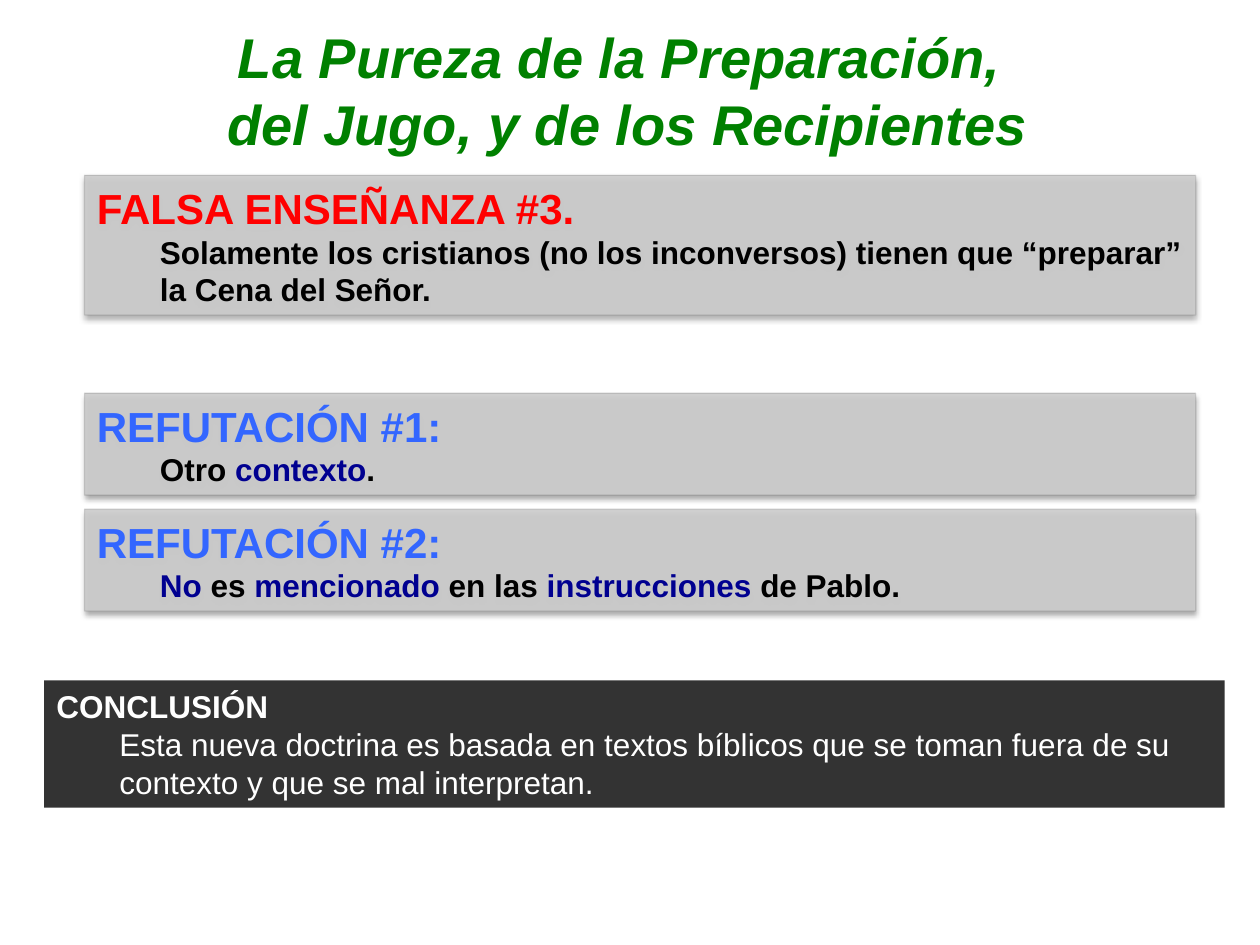
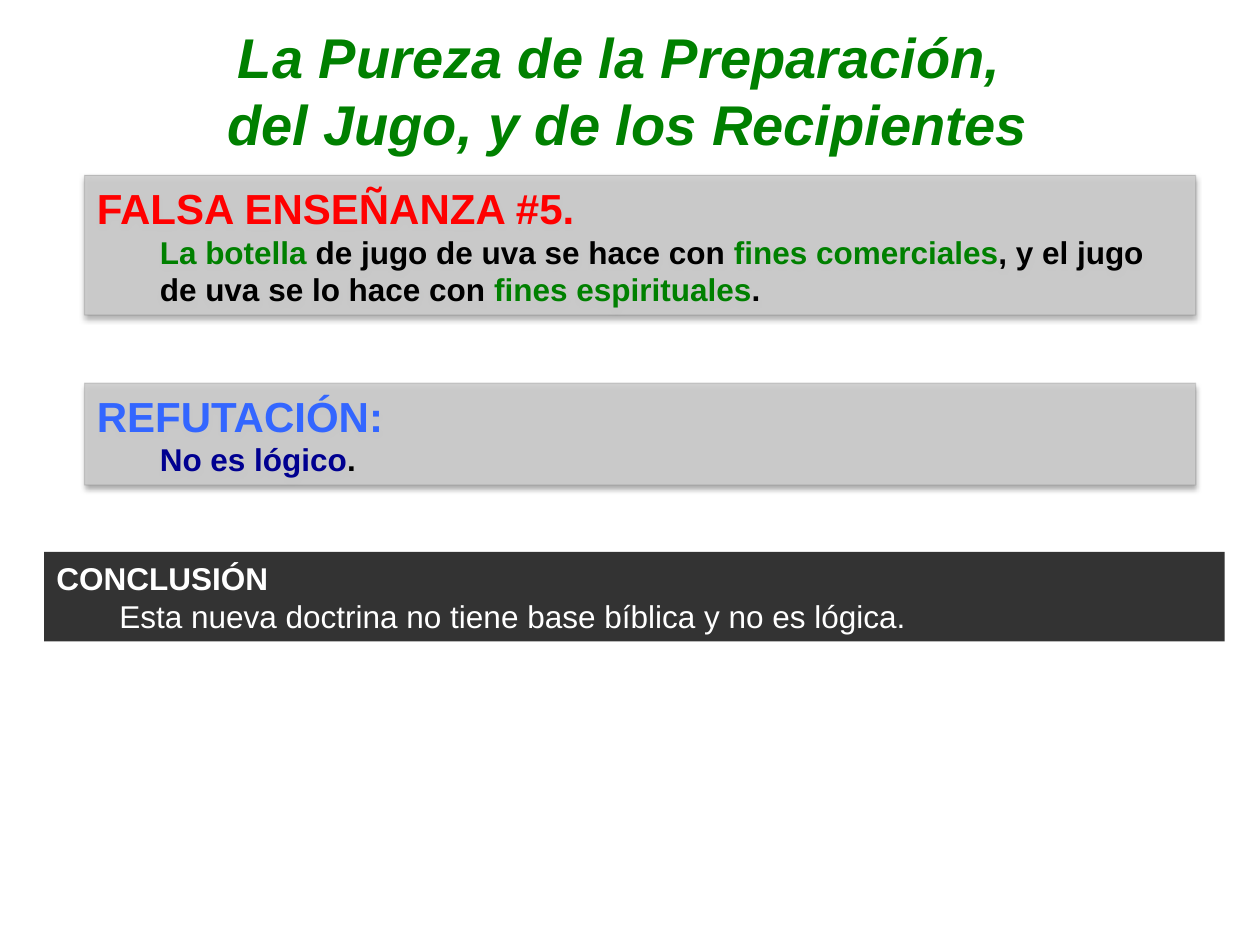
from dataclasses import dataclass
from typing import NamedTuple

from lxml import etree
from pptx import Presentation
from pptx import util as u
from pptx.dml import color as col
from pptx.enum import shapes, text
from pptx.oxml import ns


@dataclass(frozen=True)
class Theme:
    face: str = "Arial"
    green: str = "008000"
    red: str = "FF0000"
    blue: str = "3366FF"
    navy: str = "000090"
    black: str = "000000"
    white: str = "FFFFFF"
    gray: str = "CCCCCC"
    dark: str = "333333"
    title: int = 32
    head: int = 24
    body: int = 18


T = Theme()
TITLE = "La Pureza de la Preparación, \vdel Jugo, y de los Recipientes"


class Span(NamedTuple):
    words: str
    tint: str = T.black


class Card(NamedTuple):
    top: float
    high: float
    head: str
    tint: str
    spans: list[Span]


class Close(NamedTuple):
    top: float
    high: float
    words: str


class Page(NamedTuple):
    cards: list[Card]
    close: Close


def claim(num: int, spans: list[Span]) -> Card:
    return Card(1.39, 1.11, f"FALSA ENSEÑANZA #{num}.", T.red, spans)


def reply(top: float, head: str, spans: list[Span]) -> Card:
    return Card(top, 0.81, head, T.blue, spans)


PAGES = [
    Page(
        [
            claim(3, [Span("Solamente los cristianos (no los inconversos) tienen que "
                           "“preparar” la Cena del Señor.")]),
            reply(3.12, "REFUTACIÓN #1:",
                  [Span("Otro "), Span("contexto", T.navy), Span(".")]),
            reply(4.04, "REFUTACIÓN #2:",
                  [Span("No ", T.navy), Span("es "), Span("mencionado", T.navy),
                   Span(" en las "), Span("instrucciones", T.navy),
                   Span(" de Pablo.")]),
        ],
        Close(5.4, 1.01, "Esta nueva doctrina es basada en textos bíblicos que se toman "
                         "fuera de su contexto y que se mal interpretan."),
    ),
    Page(
        [
            claim(5, [Span("La botella", T.green), Span(" de jugo de uva se hace con "),
                      Span("fines comerciales", T.green),
                      Span(", y el jugo de uva se lo hace con "),
                      Span("fines espirituales", T.green), Span(".")]),
            reply(3.04, "REFUTACIÓN:", [Span("No es lógico", T.navy), Span(".")]),
        ],
        Close(4.38, 0.71, "Esta nueva doctrina no tiene base bíblica y no es lógica."),
    ),
]


def rgb(code: str) -> col.RGBColor:
    return col.RGBColor.from_string(code)


def node(root, tag: str, **attrs):
    return etree.SubElement(root, ns.qn(tag), {k: str(v) for k, v in attrs.items()})


def fade(fill, part: int) -> None:
    node(fill.find(".//" + ns.qn("a:srgbClr")), "a:alpha", val=part * 1000)


def style(para, size: int, tint: str, bold: bool = True, edge: float = 0) -> None:
    font = para.font
    font.name, font.size, font.bold = T.face, u.Pt(size), bold
    font.color.rgb = rgb(tint)
    if edge:
        line = etree.Element(ns.qn("a:ln"), {"w": str(u.Pt(edge))})
        node(node(line, "a:solidFill"), "a:srgbClr", val=T.black)
        font._rPr.insert(0, line)


def box(slide, left: float, top: float, wide: float, high: float, fill: str):
    shape = slide.shapes.add_shape(
        shapes.MSO_SHAPE.RECTANGLE,
        u.Inches(left), u.Inches(top), u.Inches(wide), u.Inches(high))
    shape.shadow.inherit = False
    shape.fill.solid()
    shape.fill.fore_color.rgb = rgb(fill)
    shape.line.fill.background()
    return shape


def write(shape, head: str, spans: list[Span], size: int, tint: str,
          edge: float, bold: bool) -> None:
    frame = shape.text_frame
    frame.word_wrap = True
    first, rest = frame.paragraphs[0], frame.add_paragraph()
    first.text = head
    first.alignment = rest.alignment = text.PP_ALIGN.LEFT
    style(first, size, tint, edge=edge)
    rest.level = 1
    props = rest._p.get_or_add_pPr()
    props.set("marL", str(u.Inches(0.5)))
    props.set("indent", "0")
    style(rest, T.body, spans[0].tint, bold)
    for span in spans:
        run = rest.add_run()
        run.text = span.words
        run.font.color.rgb = rgb(span.tint)


def shade(shape) -> None:
    props = shape._element.spPr
    fade(props.find(ns.qn("a:solidFill")), 90)
    shape.line.color.rgb = rgb(T.black)
    shape.line.width = u.Pt(0.75)
    fade(props.find(ns.qn("a:ln")), 10)
    glow = node(props.find(ns.qn("a:effectLst")), "a:outerShdw",
                blurRad=u.Pt(3.1), dist=u.Pt(1.8), dir=5400000, rotWithShape=0)
    node(glow, "a:srgbClr", val=T.black)
    fade(glow, 35)


def draw_title(slide) -> None:
    title = slide.shapes.title
    title.left, title.top = u.Inches(0), u.Inches(0.13)
    title.width, title.height = u.Inches(9.96), u.Inches(1.18)
    frame = title.text_frame
    frame.word_wrap = True
    frame.auto_size = text.MSO_AUTO_SIZE.NONE
    frame.vertical_anchor = text.MSO_ANCHOR.TOP
    para = frame.paragraphs[0]
    para.text = TITLE
    para.alignment = text.PP_ALIGN.CENTER
    style(para, T.title, T.green, edge=0.75)
    para.font.italic = True


def draw_card(slide, card: Card) -> None:
    shape = box(slide, 0.67, card.top, 8.82, card.high, T.gray)
    shade(shape)
    write(shape, card.head, card.spans, T.head, card.tint, 0.25, True)


def draw_close(slide, close: Close) -> None:
    shape = box(slide, 0.35, close.top, 9.37, close.high, T.dark)
    write(shape, "CONCLUSIÓN", [Span(close.words, T.white)],
          T.body, T.white, 0, False)


def main() -> None:
    deck = Presentation()
    deck.slide_width, deck.slide_height = u.Inches(10), u.Inches(7.5)
    for page in PAGES:
        slide = deck.slides.add_slide(deck.slide_layouts[5])
        draw_title(slide)
        for card in page.cards:
            draw_card(slide, card)
        draw_close(slide, page.close)
    deck.save("out.pptx")


if __name__ == "__main__":
    main()
